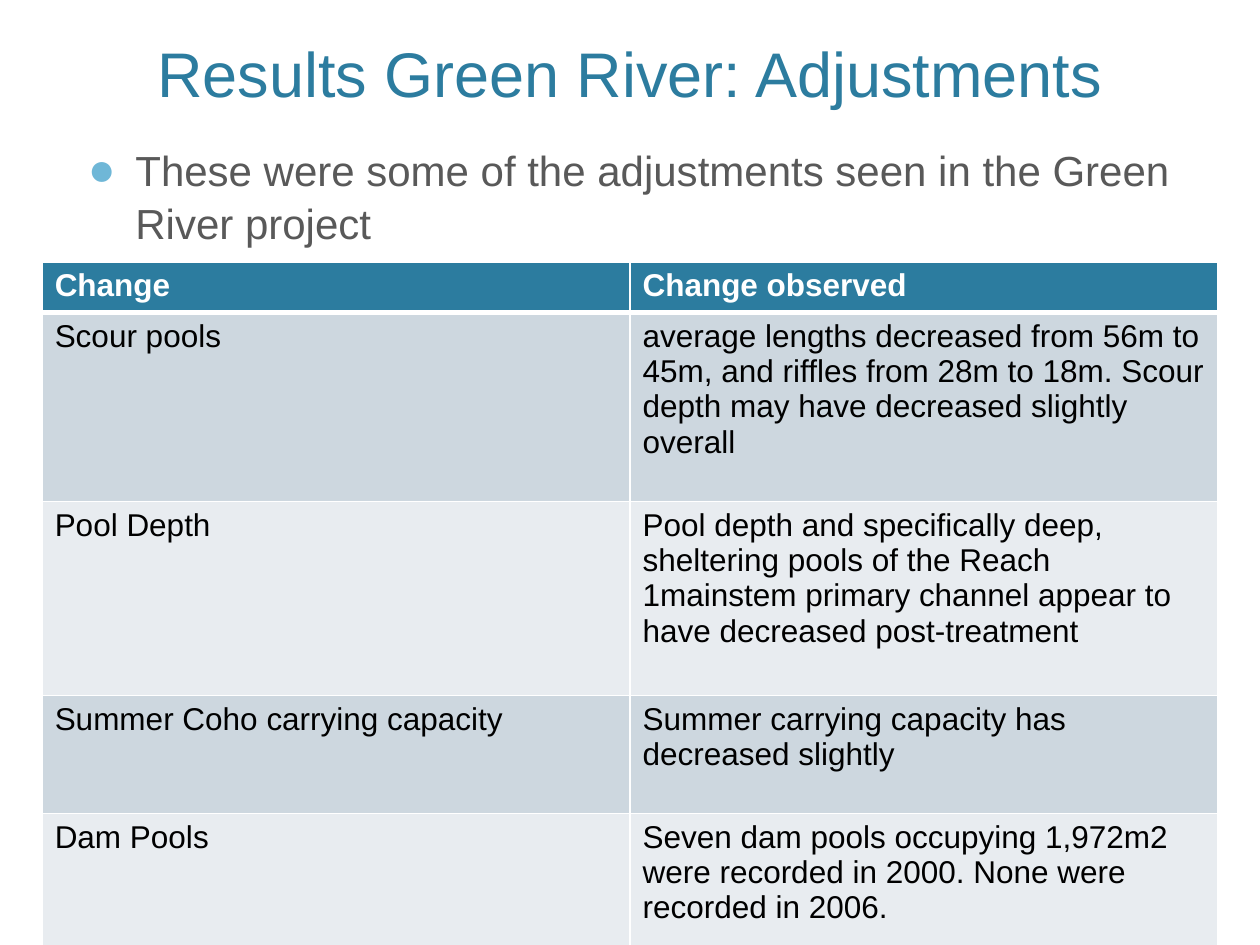
from lxml.etree import SubElement
from pptx import Presentation
from pptx.dml.color import RGBColor
from pptx.enum.text import MSO_ANCHOR, PP_ALIGN
from pptx.oxml.ns import qn
from pptx.util import Cm, Pt

TEAL = RGBColor(0x2C, 0x7C, 0x9F)
SKY = RGBColor(0x6F, 0xB7, 0xD7)
GRAY = RGBColor(0x59, 0x59, 0x59)
BLACK = RGBColor(0, 0, 0)
WHITE = RGBColor(0xFF, 0xFF, 0xFF)
BAND_DARK = RGBColor(0xCD, 0xD7, 0xDF)
BAND_LIGHT = RGBColor(0xE8, 0xEC, 0xF0)


def add_run(p, text, size, color, bold=False):
    r = p.add_run()
    r.text = text
    r.font.name = "Arial"
    r.font.size = Pt(size)
    r.font.bold = bold
    r.font.color.rgb = color


def add_border(cell, side, width):
    ln = SubElement(cell._tc.get_or_add_tcPr(), qn(f"a:{side}"), w=str(Pt(width)))
    fill = SubElement(ln, qn("a:solidFill"))
    SubElement(fill, qn("a:srgbClr"), val=str(WHITE))


prs = Presentation()
prs.slide_width = Cm(25.4)
prs.slide_height = Cm(19.05)
s = prs.slides.add_slide(prs.slide_layouts[6])

tf = s.shapes.add_textbox(Cm(1.52), Cm(0.23), Cm(22.35), Cm(2.11)).text_frame
tf.word_wrap = True
tf.vertical_anchor = MSO_ANCHOR.BOTTOM
p = tf.paragraphs[0]
p.alignment = PP_ALIGN.CENTER
add_run(p, "Results Green River: Adjustments", 36, TEAL)

tf = s.shapes.add_textbox(Cm(1.52), Cm(2.74), Cm(22.35), Cm(2.54)).text_frame
tf.word_wrap = True
p = tf.paragraphs[0]
p.line_spacing = 1.05
p.space_before = Pt(20)
add_run(p, "These were some of the adjustments seen in the Green River project", 24, GRAY)
pPr = p._p.get_or_add_pPr()
pPr.set("marL", str(Cm(0.96)))
pPr.set("indent", str(Cm(-0.96)))
SubElement(SubElement(pPr, qn("a:buClr")), qn("a:srgbClr"), val=str(SKY))
SubElement(pPr, qn("a:buSzPct"), val="110000")
SubElement(pPr, qn("a:buFont"), typeface="Arial")
SubElement(pPr, qn("a:buChar"), char="●")

rows = [
    (0.95, "Change", "Change observed"),
    (3.81, "Scour pools",
     "average lengths decreased from 56m to 45m, and riffles from 28m to 18m. "
     "Scour depth may have decreased slightly overall"),
    (3.91, "Pool Depth",
     "Pool depth and specifically deep, sheltering pools of the Reach 1mainstem "
     "primary channel appear to have decreased post-treatment"),
    (2.38, "Summer Coho carrying capacity",
     "Summer carrying capacity has decreased slightly"),
    (2.69, "Dam Pools",
     "Seven dam pools occupying 1,972m2 were recorded in 2000. "
     "None were recorded in 2006."),
]
height = sum(row[0] for row in rows)
table = s.shapes.add_table(len(rows), 2, Cm(0.85), Cm(5.28), Cm(23.7), Cm(height)).table
for i, (row_height, *texts) in enumerate(rows):
    table.rows[i].height = Cm(row_height)
    header = i == 0
    band = TEAL if header else BAND_DARK if i % 2 else BAND_LIGHT
    for j, text in enumerate(texts):
        cell = table.cell(i, j)
        for side in ("lnL", "lnR", "lnT", "lnB"):
            thick = (header and side == "lnB") or (i == 1 and side == "lnT")
            add_border(cell, side, 3 if thick else 1)
        cell.fill.solid()
        cell.fill.fore_color.rgb = band
        add_run(cell.text_frame.paragraphs[0], text, 18, WHITE if header else BLACK, header)

prs.save("out.pptx")
